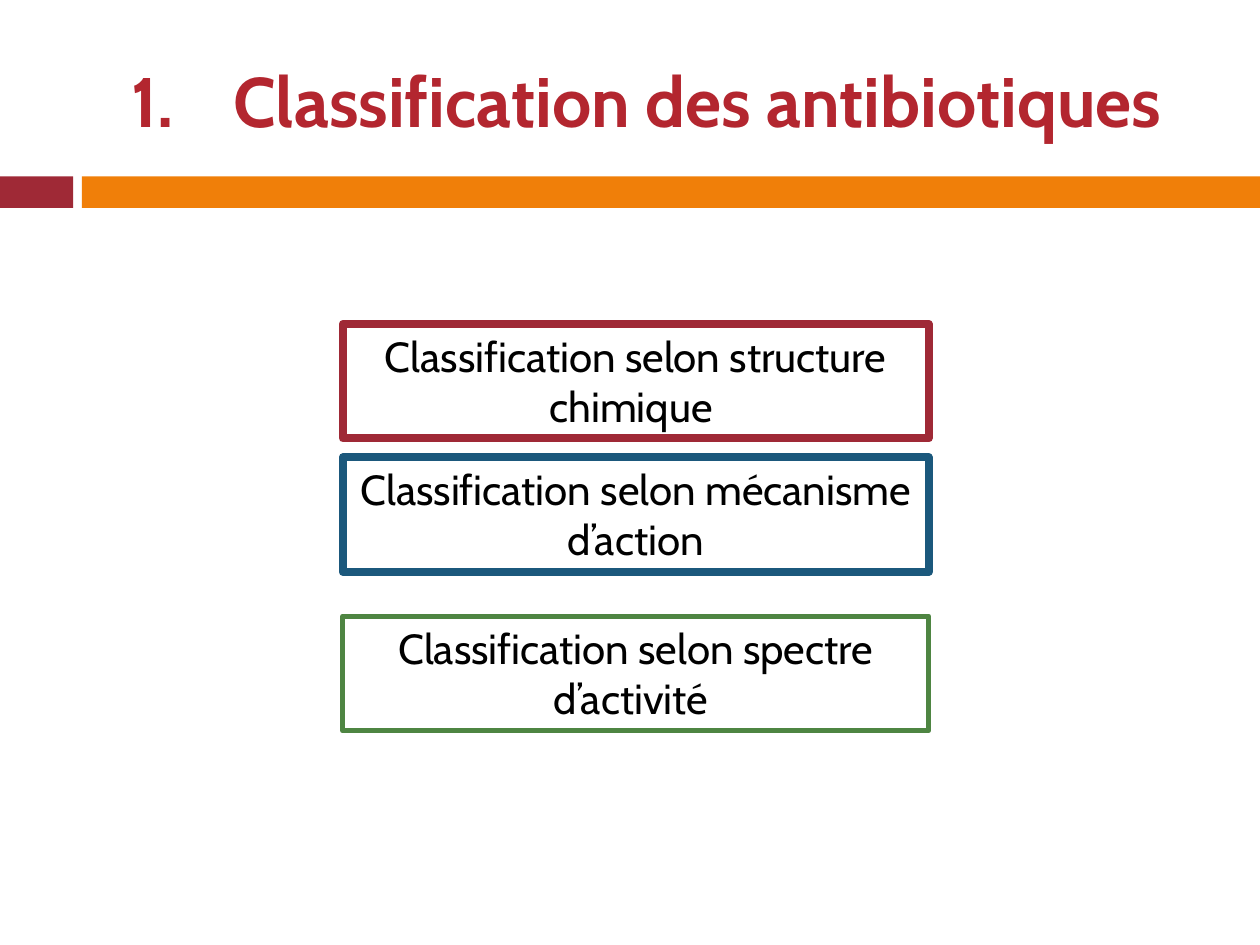
from dataclasses import dataclass

from lxml import etree
from pptx import Presentation
from pptx import util as u
from pptx.dml.color import RGBColor
from pptx.enum import shapes, text
from pptx.oxml import ns


@dataclass(frozen=True)
class Theme:
    font: str = "Cabin"
    title_size: int = 40
    body_size: int = 24
    title: str = "B3262F"
    red: str = "9F2936"
    orange: str = "F07F09"
    blue: str = "1B587C"
    green: str = "4E8542"
    white: str = "FFFFFF"
    black: str = "000000"


THEME = Theme()


def add_rectangle(page, left, top, width, height, fill):
    box = page.shapes.add_shape(
        shapes.MSO_SHAPE.RECTANGLE,
        u.Inches(left), u.Inches(top), u.Inches(width), u.Inches(height))
    box.shadow.inherit = False
    box.fill.solid()
    box.fill.fore_color.rgb = RGBColor.from_string(fill)
    box.line.fill.background()
    return box


def write_centred(box, wording, size, color, bold=False):
    box.text_frame.word_wrap = True
    box.text_frame.text = wording
    para = box.text_frame.paragraphs[0]
    para.alignment = text.PP_ALIGN.CENTER
    font = para.runs[0].font
    font.name = THEME.font
    font.size = u.Pt(size)
    font.bold = bold
    font.color.rgb = RGBColor.from_string(color)
    return para


def number_paragraph(para, indent):
    """Give the paragraph automatic "1." numbering with a hanging indent."""
    properties = para._p.get_or_add_pPr()
    properties.set("marL", str(u.Inches(indent)))
    properties.set("indent", str(u.Inches(-indent)))
    numbering = etree.SubElement(properties, ns.qn("a:buAutoNum"))
    numbering.set("type", "arabicPeriod")


def add_title(page, wording):
    box = page.shapes.add_textbox(
        u.Inches(0.67), u.Inches(0.25), u.Inches(8.92), u.Inches(1.08))
    box.text_frame.vertical_anchor = text.MSO_ANCHOR.MIDDLE
    para = write_centred(box, wording, THEME.title_size, THEME.title, bold=True)
    number_paragraph(para, 0.81)


def add_category(page, top, wording, outline, weight):
    box = add_rectangle(page, 2.72, top, 4.65, 0.91, THEME.white)
    box.line.color.rgb = RGBColor.from_string(outline)
    box.line.width = u.Pt(weight)
    write_centred(box, wording, THEME.body_size, THEME.black)
    box.text_frame.vertical_anchor = text.MSO_ANCHOR.TOP
    box.text_frame.auto_size = text.MSO_AUTO_SIZE.SHAPE_TO_FIT_TEXT


def main():
    deck = Presentation()
    deck.slide_width, deck.slide_height = u.Inches(10), u.Inches(7.5)
    page = deck.slides.add_slide(deck.slide_layouts[6])

    add_rectangle(page, 0, 1.4, 0.58, 0.25, THEME.red)
    add_rectangle(page, 0.65, 1.4, 9.35, 0.25, THEME.orange)
    add_title(page, "Classification des antibiotiques")

    categories = [
        (2.57, "Classification selon structure chimique ", THEME.red, 4.5),
        (3.63, "Classification selon mécanisme d’action", THEME.blue, 4.5),
        (4.89, "Classification selon spectre d’activité ", THEME.green, 3),
    ]
    for top, wording, outline, weight in categories:
        add_category(page, top, wording, outline, weight)

    deck.save("out.pptx")


if __name__ == "__main__":
    main()
